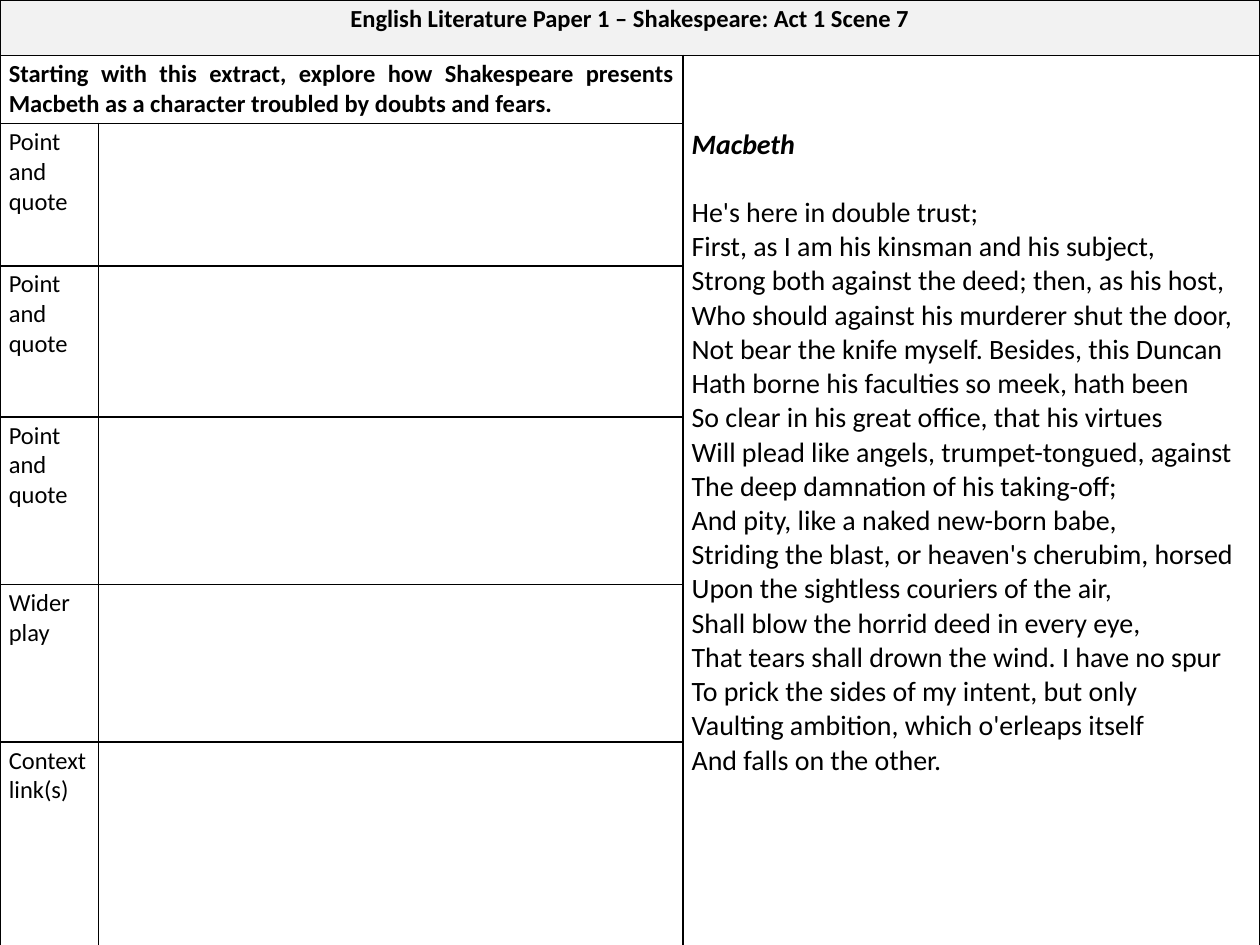
from lxml import etree
from pptx import Presentation
from pptx.dml.color import RGBColor
from pptx.enum.text import PP_ALIGN
from pptx.oxml.ns import qn
from pptx.util import Inches, Pt

LEFT, MID, JUST = PP_ALIGN.LEFT, PP_ALIGN.CENTER, PP_ALIGN.JUSTIFY
COLORS = {"ink": "000000", "band": "F2F2F2"}
COLS = [0.78, 4.64, 4.58]
ROWS = [0.44, 0.54, 1.13, 1.2, 1.33, 1.25, 1.66]
PAD = {"margin_left": 0.07, "margin_right": 0.07,
       "margin_top": 0.03, "margin_bottom": 0.03}
BODY = {"name": "Calibri", "size": Pt(14), "bold": False, "italic": False}
HEAD = {**BODY, "bold": True}
VERSE = {**BODY, "size": Pt(16)}
NAME = {**VERSE, "bold": True, "italic": True}
GAP = 19.5  # height of one verse line, in points

TITLE = "English Literature Paper 1 – Shakespeare: Act 1 Scene 7"
TASK = ("Starting with this extract, explore how Shakespeare presents "
        "Macbeth as a character troubled by doubts and fears.")
LABELS = ["Point and quote"] * 3 + ["Wider play", "Context link(s)"]
SPEECH = [
    "He's here in double trust;",
    "First, as I am his kinsman and his subject,",
    "Strong both against the deed; then, as his host,",
    "Who should against his murderer shut the door,",
    "Not bear the knife myself. Besides, this Duncan",
    "Hath borne his faculties so meek, hath been",
    "So clear in his great office, that his virtues",
    "Will plead like angels, trumpet-tongued, against",
    "The deep damnation of his taking-off;",
    "And pity, like a naked new-born babe,",
    "Striding the blast, or heaven's cherubim, horsed",
    "Upon the sightless couriers of the air,",
    "Shall blow the horrid deed in every eye,",
    "That tears shall drown the wind. I have no spur",
    "To prick the sides of my intent, but only",
    "Vaulting ambition, which o'erleaps itself",
    "And falls on the other.",
]


def add_edges(cell):
    """Draw a thin solid line on each side of a cell."""
    props = cell._tc.get_or_add_tcPr()
    for side in ("lnL", "lnR", "lnT", "lnB"):
        line = etree.SubElement(props, qn(f"a:{side}"), w=str(Pt(1)))
        fill = etree.SubElement(line, qn("a:solidFill"))
        etree.SubElement(fill, qn("a:srgbClr"), val=COLORS["ink"])


def style_cell(cell):
    add_edges(cell)
    cell.fill.background()
    for key, size in PAD.items():
        setattr(cell, key, Inches(size))


def write(para, text, form, align=LEFT):
    para.alignment = align
    run = para.add_run()
    run.text = text
    for key, value in form.items():
        setattr(run.font, key, value)
    run.font.color.rgb = RGBColor.from_string(COLORS["ink"])


def add_grid(slide):
    frame = slide.shapes.add_table(len(ROWS), len(COLS), 0, 0,
                                   Inches(sum(COLS)), Inches(sum(ROWS)))
    grid = frame.table
    grid.first_row = grid.horz_banding = False
    for col, width in zip(grid.columns, COLS):
        col.width = Inches(width)
    for row, height in zip(grid.rows, ROWS):
        row.height = Inches(height)
    for cell in grid.iter_cells():
        style_cell(cell)
    return grid


def add_speech(cell):
    """Speaker's name, then one paragraph for each line of verse."""
    cell.margin_top = Inches(PAD["margin_top"]) + Pt(2 * GAP)
    frame = cell.text_frame
    write(frame.paragraphs[0], "Macbeth", NAME)
    frame.paragraphs[0].space_after = Pt(GAP)
    for line in SPEECH:
        write(frame.add_paragraph(), line, VERSE)


def main():
    deck = Presentation()
    deck.slide_width, deck.slide_height = Inches(10), Inches(7.5)
    slide = deck.slides.add_slide(deck.slide_layouts[6])
    grid = add_grid(slide)

    # Title band
    title = grid.cell(0, 0)
    title.merge(grid.cell(0, 2))
    title.fill.solid()
    title.fill.fore_color.rgb = RGBColor.from_string(COLORS["band"])
    write(title.text_frame.paragraphs[0], TITLE, HEAD, MID)

    # Question
    task = grid.cell(1, 0)
    task.merge(grid.cell(1, 1))
    write(task.text_frame.paragraphs[0], TASK, HEAD, JUST)

    # Extract
    verse = grid.cell(1, 2)
    verse.merge(grid.cell(len(ROWS) - 1, 2))
    add_speech(verse)

    # Answer rows
    for row, label in enumerate(LABELS, start=2):
        write(grid.cell(row, 0).text_frame.paragraphs[0], label, BODY)

    deck.save("out.pptx")


if __name__ == "__main__":
    main()
